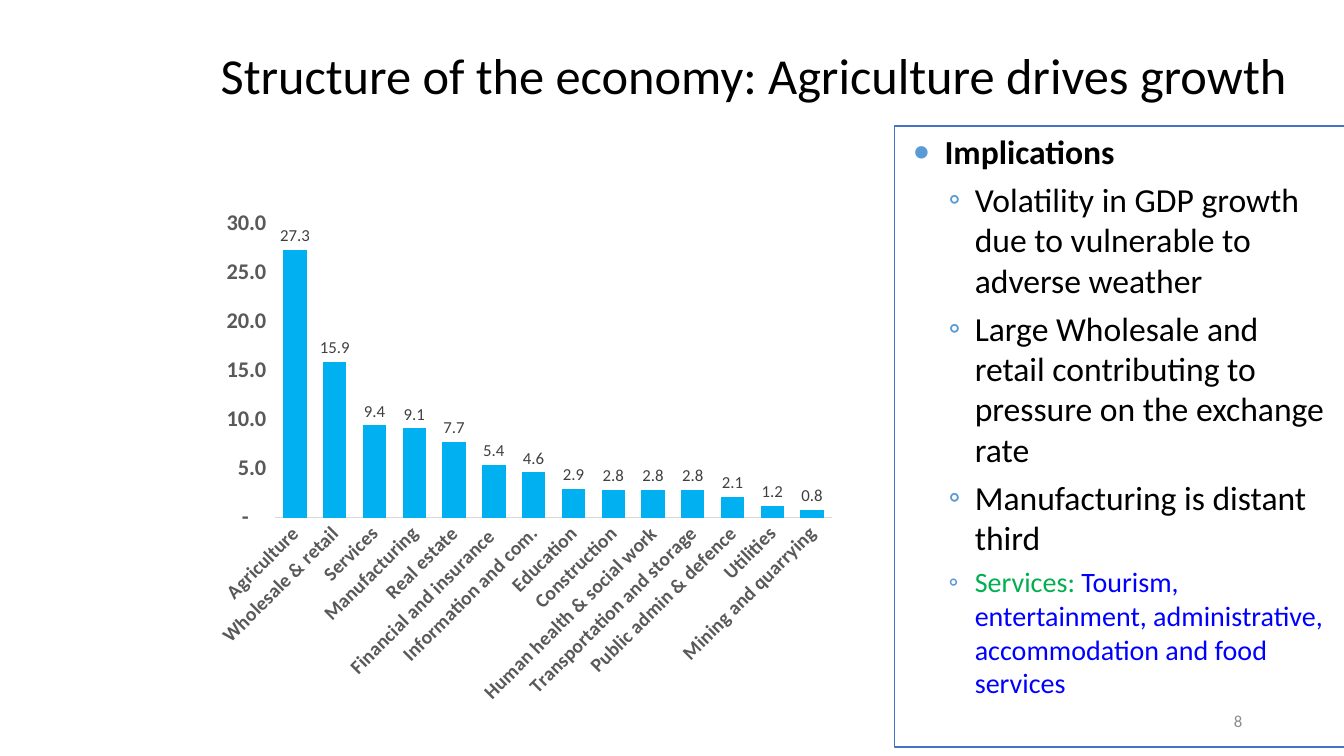
from dataclasses import dataclass

from lxml.etree import SubElement
from pptx import Presentation
from pptx.chart.data import CategoryChartData
from pptx.dml.color import RGBColor
from pptx.enum.chart import XL_CHART_TYPE as ChartType
from pptx.enum.chart import XL_LABEL_POSITION as LabelPosition
from pptx.enum.chart import XL_TICK_MARK as TickMark
from pptx.enum.shapes import MSO_SHAPE as ShapeKind
from pptx.enum.text import MSO_ANCHOR as Anchor
from pptx.enum.text import PP_ALIGN as Align
from pptx.oxml.ns import qn
from pptx.util import Emu, Pt


@dataclass(frozen=True)
class Theme:
    """Colours, type sizes and the font of the slide."""

    font: str = "Calibri"
    black: str = "000000"
    white: str = "FFFFFF"
    frame: str = "4472C4"
    bullet: str = "5B9BD5"
    green: str = "00B050"
    blue: str = "0000FF"
    bar: str = "00B0F0"
    axis_text: str = "595959"
    axis_line: str = "D9D9D9"
    label_text: str = "404040"
    page_text: str = "8C8C8C"
    title_size: int = 36
    body_size: int = 24
    detail_size: int = 20
    value_size: int = 16
    category_size: int = 14
    small_size: int = 12


THEME = Theme()
EMU_PER_PX = 9144
NUMBER_FORMAT = r'_ * #,##0.0_ ;_ * \-#,##0.0_ ;_ * "-"??_'
PLOT_LAYOUT = {"x": 0.155, "y": 0.109, "w": 0.787, "h": 0.501}
LABEL_ROTATION = -45 * 60000

SECTOR_SHARES = {
    "Agriculture": 27.3,
    "Wholesale & retail": 15.9,
    "Services": 9.4,
    "Manufacturing": 9.1,
    "Real estate": 7.7,
    "Financial and insurance ": 5.4,
    "Information and com.": 4.6,
    "Education": 2.9,
    "Construction": 2.8,
    "Human health & social work": 2.8,
    "Transportation and storage": 2.8,
    "Public admin & defence": 2.1,
    "Utilities": 1.2,
    "Mining and quarrying": 0.8,
}

IMPLICATIONS = [
    "Volatility in GDP growth due to vulnerable to adverse weather",
    "Large Wholesale and retail contributing to pressure on the exchange rate",
    "Manufacturing is distant third",
]
SERVICES = "Tourism, entertainment, administrative, accommodation and food services"


def px(*lengths):
    """Turn px lengths into EMU."""
    return [Emu(length * EMU_PER_PX) for length in lengths]


def set_attributes(target, values):
    """Set each named value on the target."""
    for name, value in values.items():
        setattr(target, name, value)


def style_font(font, size, color, bold=False):
    """Give a font its face, size, weight and colour."""
    set_attributes(font, {"name": THEME.font, "size": Pt(size), "bold": bold})
    font.color.rgb = RGBColor.from_string(color)


def add_run(paragraph, text, size, color, bold=False):
    """Append styled text to a paragraph."""
    run = paragraph.add_run()
    run.text = text
    style_font(run.font, size, color, bold)


def add_text(slide, box, text, size, color, paragraph_format):
    """Add a one-line text box, centred vertically."""
    frame = slide.shapes.add_textbox(*px(*box)).text_frame
    set_attributes(frame, {"word_wrap": True, "vertical_anchor": Anchor.MIDDLE})
    paragraph = frame.paragraphs[0]
    set_attributes(paragraph, paragraph_format)
    add_run(paragraph, text, size, color)


def add_bullet(paragraph, character, left, hanging, before, scale=100):
    """Give a paragraph a coloured bullet and a hanging indent."""
    paragraph.alignment = Align.LEFT
    paragraph.space_before = Pt(before)
    properties = paragraph._p.get_or_add_pPr()
    margin, indent = px(left, -hanging)
    properties.set("marL", str(margin))
    properties.set("indent", str(indent))
    color = SubElement(properties, qn("a:buClr"))
    SubElement(color, qn("a:srgbClr"), val=THEME.bullet)
    SubElement(properties, qn("a:buSzPct"), val=str(scale * 1000))
    SubElement(properties, qn("a:buFont"), typeface=THEME.font)
    SubElement(properties, qn("a:buChar"), char=character)


def add_implications(slide, box):
    """Add the framed panel of implications."""
    panel = slide.shapes.add_shape(ShapeKind.RECTANGLE, *px(*box))
    panel.shadow.inherit = False
    panel.fill.solid()
    panel.fill.fore_color.rgb = RGBColor.from_string(THEME.white)
    panel.line.color.rgb = RGBColor.from_string(THEME.frame)
    panel.line.width = Pt(1)
    frame = panel.text_frame
    set_attributes(frame, {"word_wrap": True, "vertical_anchor": Anchor.TOP})

    heading = frame.paragraphs[0]
    add_bullet(heading, "●", 40, 31, 6, 80)
    add_run(heading, "Implications", THEME.body_size, THEME.black, True)

    points = [[(text, THEME.body_size, THEME.black)] for text in IMPLICATIONS]
    points.append([
        ("Services: ", THEME.detail_size, THEME.green),
        (SERVICES, THEME.detail_size, THEME.blue),
    ])
    for runs in points:
        paragraph = frame.add_paragraph()
        paragraph.level = 1
        add_bullet(paragraph, "◦", 70, 26, 5.5)
        for run in runs:
            add_run(paragraph, *run)


def style_axis(axis, size):
    """Remove grid and ticks from an axis and style its labels."""
    set_attributes(axis, {
        "has_major_gridlines": False,
        "major_tick_mark": TickMark.NONE,
        "minor_tick_mark": TickMark.NONE,
    })
    style_font(axis.tick_labels.font, size, THEME.axis_text, True)


def set_plot_layout(chart):
    """Place the inner plot area by fractions of the chart."""
    area = chart._chartSpace.chart.plotArea
    for layout in area.findall(qn("c:layout")):
        area.remove(layout)
    layout = SubElement(area, qn("c:layout"))
    area.insert(0, layout)
    manual = SubElement(layout, qn("c:manualLayout"))
    SubElement(manual, qn("c:layoutTarget"), val="inner")
    for side in "xy":
        SubElement(manual, qn(f"c:{side}Mode"), val="edge")
    for name, fraction in PLOT_LAYOUT.items():
        SubElement(manual, qn(f"c:{name}"), val=str(fraction))


def add_sector_chart(slide, box):
    """Add the column chart of sector shares."""
    data = CategoryChartData(number_format="0.0")
    data.categories = list(SECTOR_SHARES)
    data.add_series("Series 1", list(SECTOR_SHARES.values()))
    frame = slide.shapes.add_chart(ChartType.COLUMN_CLUSTERED, *px(*box), data)
    chart = frame.chart
    set_attributes(chart, {"has_legend": False, "has_title": False})
    style_font(chart.font, 10, THEME.black)
    set_plot_layout(chart)

    plot = chart.plots[0]
    set_attributes(plot, {
        "gap_width": 71, "overlap": -27,
        "vary_by_categories": False, "has_data_labels": True,
    })
    set_attributes(plot.data_labels, {
        "show_value": True, "position": LabelPosition.OUTSIDE_END,
        "number_format": NUMBER_FORMAT, "number_format_is_linked": False,
    })
    style_font(plot.data_labels.font, THEME.small_size, THEME.label_text)
    fill = plot.series[0].format.fill
    fill.solid()
    fill.fore_color.rgb = RGBColor.from_string(THEME.bar)

    sectors, shares = chart.category_axis, chart.value_axis
    style_axis(sectors, THEME.category_size)
    sectors.format.line.color.rgb = RGBColor.from_string(THEME.axis_line)
    sectors.format.line.width = Pt(0.75)
    body = sectors._element.find(f"{qn('c:txPr')}/{qn('a:bodyPr')}")
    body.set("rot", str(LABEL_ROTATION))
    style_axis(shares, THEME.value_size)
    shares.format.line.fill.background()
    set_attributes(shares, {"minimum_scale": 0, "maximum_scale": 30, "major_unit": 5})
    set_attributes(shares.tick_labels, {
        "number_format": NUMBER_FORMAT, "number_format_is_linked": False,
    })


def main():
    """Build and save the slide."""
    presentation = Presentation()
    width, height = px(1333, 750)
    set_attributes(presentation, {"slide_width": width, "slide_height": height})
    slide = presentation.slides.add_slide(presentation.slide_layouts[6])
    add_text(slide, (209, 30, 1094, 95),
             "Structure of the economy: Agriculture drives growth",
             THEME.title_size, THEME.black, {"line_spacing": 0.9})
    add_implications(slide, (887, 125, 447, 616))
    add_text(slide, (942, 695, 300, 40), "8",
             THEME.small_size, THEME.page_text, {"alignment": Align.RIGHT})
    add_sector_chart(slide, (164, 158, 702, 583))
    presentation.save("out.pptx")


if __name__ == "__main__":
    main()
